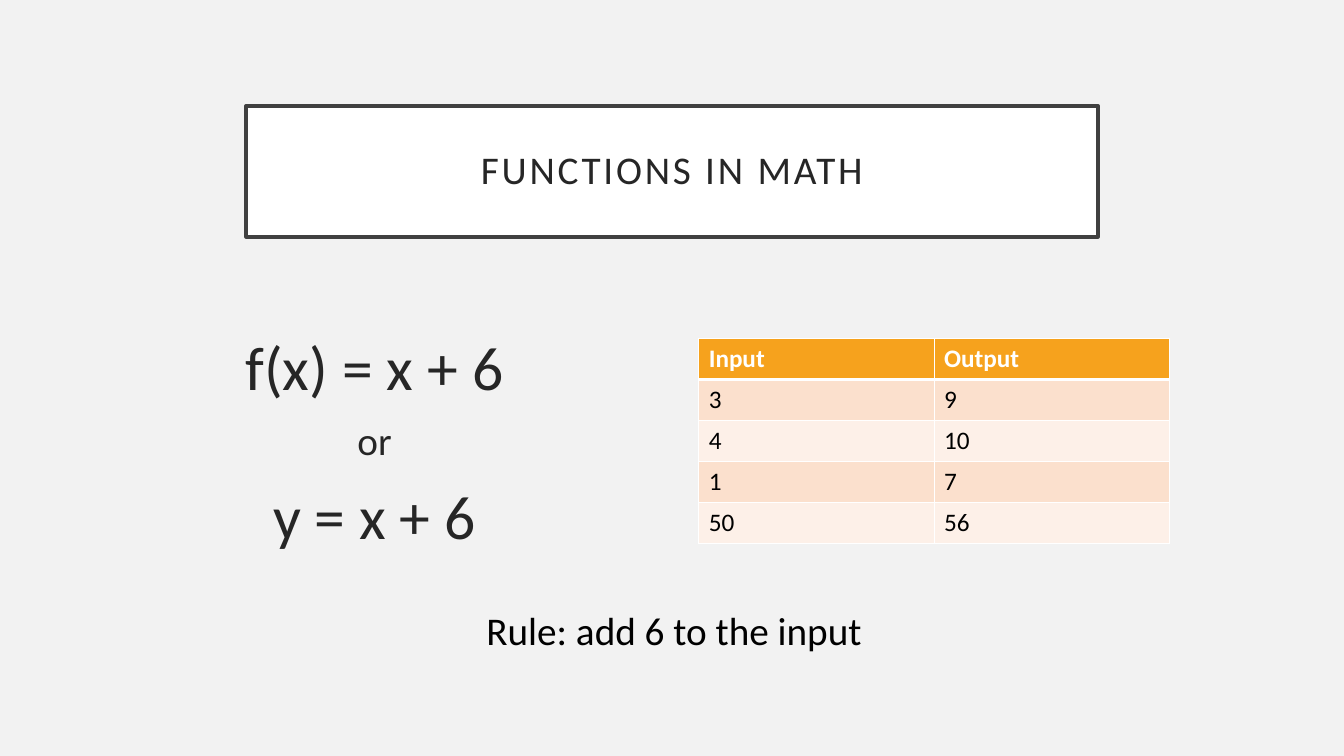
from lxml.etree import SubElement
from pptx import Presentation
from pptx.dml.color import RGBColor
from pptx.enum.text import MSO_ANCHOR, MSO_AUTO_SIZE, PP_ALIGN
from pptx.oxml.ns import qn
from pptx.util import Inches, Pt


def paint(target, color):
    target.solid()
    target.fore_color.rgb = RGBColor.from_string(color)


def write(paragraph, text, size=18, color="000000", bold=False, align=PP_ALIGN.LEFT,
          before=0, line_spacing=1.0, tracking=0):
    paragraph.alignment = align
    paragraph.space_before = Pt(before)
    paragraph.line_spacing = line_spacing
    properties = paragraph._p.get_or_add_pPr()
    properties.set("marL", "0")
    properties.set("indent", "0")
    SubElement(properties, qn("a:buNone"))
    run = paragraph.add_run()
    run.text = text
    run.font.name = "Calibri"
    run.font.size = Pt(size)
    run.font.bold = bold
    paint(run.font.fill, color)
    if tracking:
        run.font._element.set("spc", str(tracking * 100))


deck = Presentation()
deck.slide_width, deck.slide_height = Inches(13.33), Inches(7.5)
slide = deck.slides.add_slide(deck.slide_layouts[1])
paint(slide.background.fill, "F2F2F2")

heading = slide.shapes.title
heading.left, heading.top = Inches(2.44), Inches(1.05)
heading.width, heading.height = Inches(8.45), Inches(1.3)
paint(heading.fill, "FFFFFF")
paint(heading.line.fill, "404040")
heading.line.width = Pt(2.5)
heading_text = heading.text_frame
heading_text.auto_size = MSO_AUTO_SIZE.NONE
heading_text.vertical_anchor = MSO_ANCHOR.MIDDLE
heading_text.margin_left = heading_text.margin_right = Inches(0.2)
heading_text.margin_top = heading_text.margin_bottom = Inches(0.2)
write(heading_text.paragraphs[0], "FUNCTIONS IN MATH", size=28, color="262626",
      align=PP_ALIGN.CENTER, line_spacing=0.9, tracking=2)

values = [("Input", "Output"), ("3", "9"), ("4", "10"), ("1", "7"), ("50", "56")]
value_table = slide.shapes.add_table(len(values), 2, Inches(6.93), Inches(3.36),
                                     Inches(4.67), Inches(2.03)).table
for row, pair in enumerate(values):
    header = row == 0
    for column, value in enumerate(pair):
        cell = value_table.cell(row, column)
        write(cell.text_frame.paragraphs[0], value, bold=header,
              color="FFFFFF" if header else "000000")
        cell_properties = cell._tc.get_or_add_tcPr()
        for side in ("lnL", "lnR", "lnT", "lnB"):
            thick = (row, side) in ((0, "lnB"), (1, "lnT"))
            border = SubElement(cell_properties, qn(f"a:{side}"), w=str(Pt(3 if thick else 1)))
            SubElement(SubElement(border, qn("a:solidFill")), qn("a:srgbClr"), val="FFFFFF")
        paint(cell.fill, "F6A21D" if header else ("FDF0E8", "FBE0CD")[row % 2])

equations = slide.placeholders[1]
equations.left, equations.top = Inches(1.42), Inches(3.18)
equations.width, equations.height = Inches(4.59), Inches(2.37)
equations_text = equations.text_frame
equations_text.auto_size = MSO_AUTO_SIZE.NONE
equations_text.vertical_anchor = MSO_ANCHOR.MIDDLE
for index, (text, size) in enumerate([("f(x) = x + 6", 44), ("or", 28), ("y = x + 6", 44)]):
    line = equations_text.add_paragraph() if index else equations_text.paragraphs[0]
    write(line, text, size=size, color="262626", align=PP_ALIGN.CENTER,
          before=10 if index else 0)

rule = slide.shapes.add_textbox(Inches(4.35), Inches(5.97), Inches(4.67), Inches(0.57))
rule.text_frame.word_wrap = True
rule.text_frame.auto_size = MSO_AUTO_SIZE.SHAPE_TO_FIT_TEXT
write(rule.text_frame.paragraphs[0], "Rule: add 6 to the input", size=28,
      align=PP_ALIGN.CENTER)

deck.save("out.pptx")
